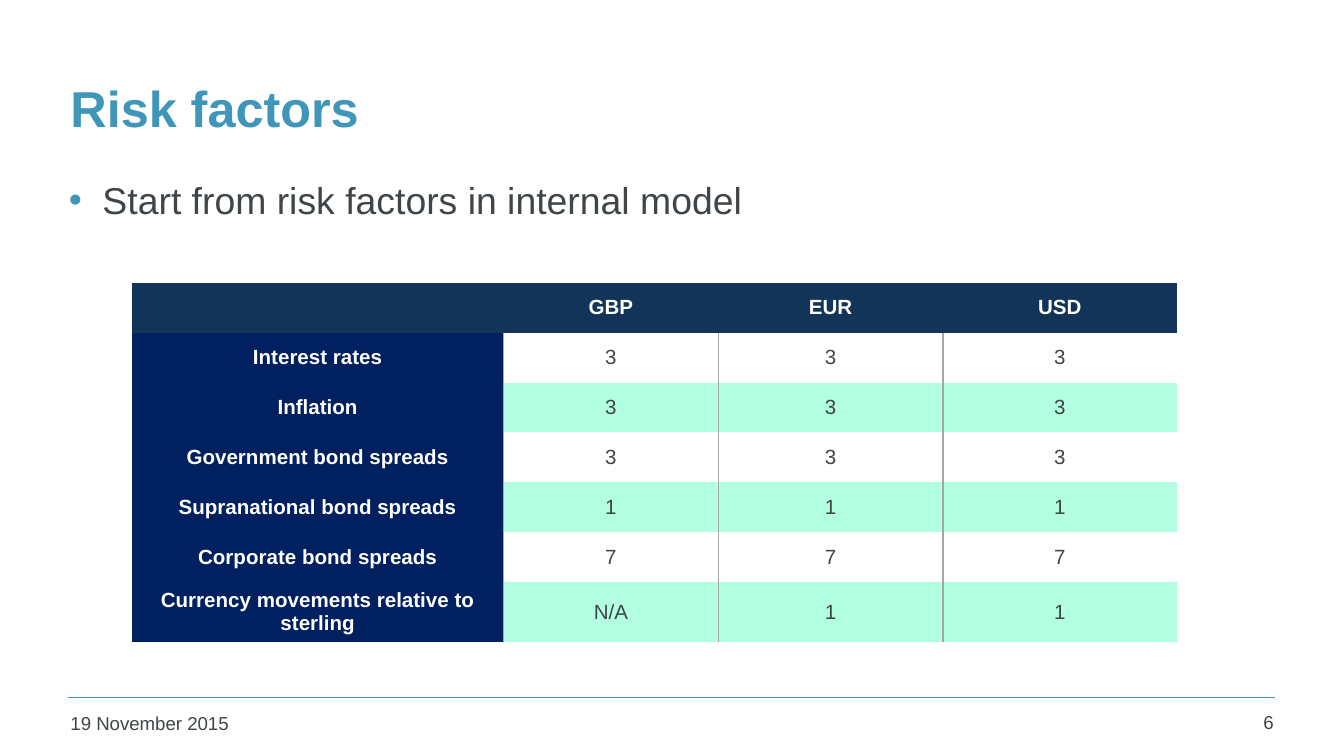
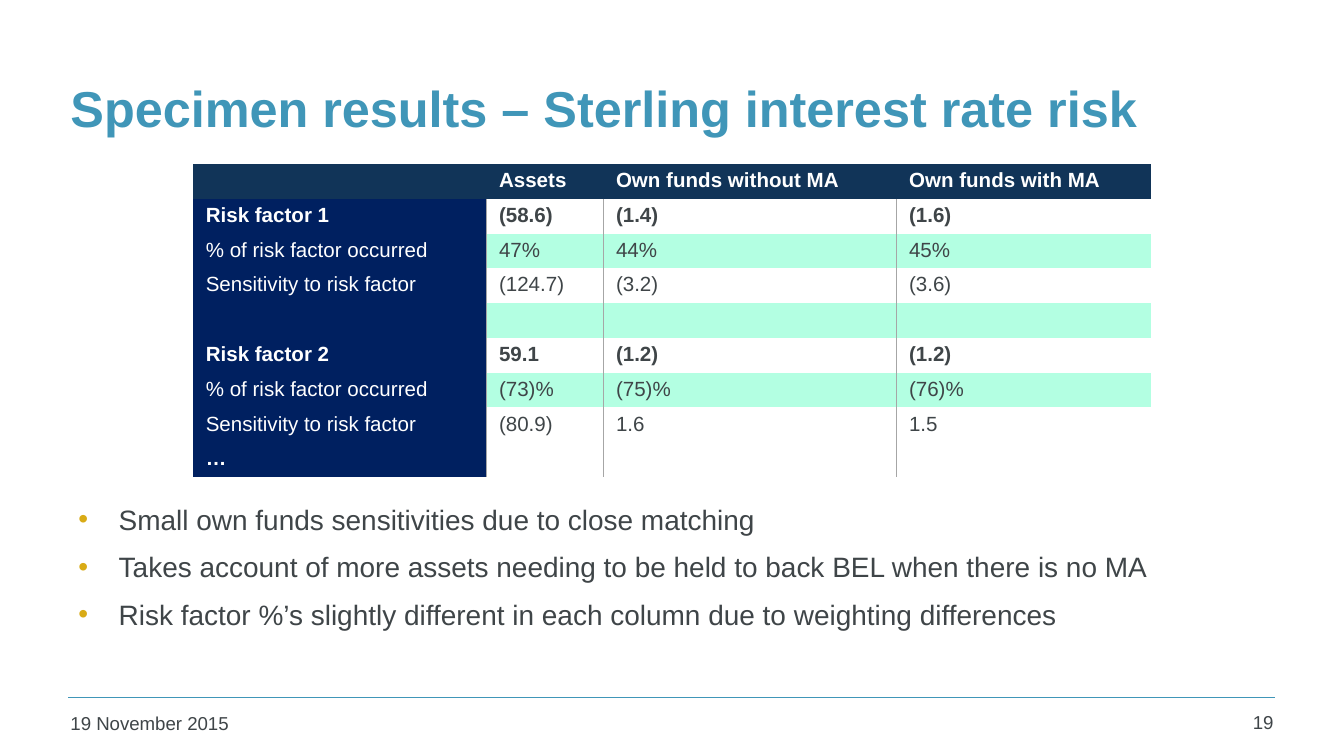
"""Build two slides on risk factors and specimen interest rate results."""
from dataclasses import dataclass

from lxml import etree
from pptx import Presentation
from pptx.dml.color import RGBColor
from pptx.enum.shapes import MSO_CONNECTOR
from pptx.enum.text import MSO_ANCHOR, PP_ALIGN
from pptx.oxml.ns import qn
from pptx.util import Pt

STRAIGHT = MSO_CONNECTOR.STRAIGHT
TOP, MIDDLE = MSO_ANCHOR.TOP, MSO_ANCHOR.MIDDLE
LEFT, CENTER, RIGHT = PP_ALIGN.LEFT, PP_ALIGN.CENTER, PP_ALIGN.RIGHT
NO_GRID_STYLE = "{2D5ABB26-0587-4C30-8999-92F81FD0307C}"


@dataclass(frozen=True)
class Theme:
    """Colours, type sizes and insets shared by the slides."""
    font: str = "Arial"
    accent: str = "4096B8"
    gold: str = "D9AB16"
    ink: str = "3F4548"
    white: str = "FFFFFF"
    header: str = "113458"
    label: str = "002060"
    band: str = "B3FFE2"
    grid: str = "A6A6A6"
    title_size: int = 27
    lead_size: int = 20
    note_size: int = 15
    cell_size: int = 11
    footer_size: int = 10
    side_inset: float = 6.75
    end_inset: float = 2.7


def apply(target, values):
    """Set each named attribute on the target."""
    for name, value in values.items():
        setattr(target, name, value)


def add_xml(parent, tag, **attributes):
    """Append a DrawingML element to the parent."""
    return etree.SubElement(parent, qn(tag), attributes)


class Deck:
    """Hold the theme and current slide and add its elements."""

    def __init__(self, theme):
        """Open an empty presentation."""
        self.theme = theme
        self.presentation = Presentation()
        apply(self.presentation, {"slide_width": Pt(720), "slide_height": Pt(405)})
        self.slide = None
        self.insets = {
            "margin_left": Pt(theme.side_inset), "margin_right": Pt(theme.side_inset),
            "margin_top": Pt(theme.end_inset), "margin_bottom": Pt(theme.end_inset),
        }

    def start_slide(self, title, number):
        """Add a slide with its title, rule and footer."""
        theme = self.theme
        self.slide = self.presentation.slides.add_slide(self.presentation.slide_layouts[6])
        self.rule(36.7, 683.3, 373.7)
        self.text((31, 23.8, 653, 67.7), [title], theme.title_size, theme.accent,
                  bold=True, anchor=MIDDLE)
        self.text((31, 378.7, 158.4, 19.4), ["19 November 2015"], theme.footer_size, theme.ink)
        self.text((638, 378, 51, 20), [number], theme.footer_size, theme.ink, align=RIGHT)

    def rule(self, left, right, y):
        """Draw the horizontal line above the footer."""
        rule = self.slide.shapes.add_connector(STRAIGHT, Pt(left), Pt(y), Pt(right), Pt(y))
        rule.line.color.rgb = RGBColor.from_string(self.theme.accent)
        rule.line.width = Pt(1)
        add_xml(rule._element.spPr, "a:effectLst")

    def fill_paragraph(self, paragraph, words, size, color, bold=False, align=LEFT):
        """Put formatted words into a paragraph."""
        paragraph.alignment = align
        if not words:
            add_xml(paragraph._p, "a:endParaRPr", sz=str(size * 100))
            return
        run = paragraph.add_run()
        run.text = words
        apply(run.font, {"name": self.theme.font, "size": Pt(size), "bold": bold})
        run.font.color.rgb = RGBColor.from_string(color)

    def text(self, box, lines, size, color, bold=False, align=LEFT, anchor=TOP):
        """Add a text box with one paragraph per line and return its paragraphs."""
        frame = self.slide.shapes.add_textbox(*map(Pt, box)).text_frame
        apply(frame, {"word_wrap": True, "vertical_anchor": anchor, **self.insets})
        for index, line in enumerate(lines):
            paragraph = frame.add_paragraph() if index else frame.paragraphs[0]
            self.fill_paragraph(paragraph, line, size, color, bold, align)
        return frame.paragraphs

    def bullets(self, box, lines, size, bullet_color, indent):
        """Add a bulleted list with a hanging indent."""
        for paragraph in self.text(box, lines, size, self.theme.ink):
            properties = paragraph._p.get_or_add_pPr()
            properties.set("marL", str(Pt(indent)))
            properties.set("indent", str(-Pt(indent)))
            add_xml(add_xml(properties, "a:spcBef"), "a:spcPct", val="50000")
            add_xml(add_xml(properties, "a:buClr"), "a:srgbClr", val=bullet_color)
            add_xml(properties, "a:buFont", typeface=self.theme.font)
            add_xml(properties, "a:buChar", char="•")

    def cell_edges(self, cell, sides):
        """Draw grid lines on the named sides of a cell."""
        properties = cell._tc.get_or_add_tcPr()
        for side in sides:
            edge = add_xml(properties, f"a:ln{side}", w=str(Pt(1)))
            add_xml(add_xml(edge, "a:solidFill"), "a:srgbClr", val=self.theme.grid)

    def table(self, corner, widths, heights, rows, band_rows, bold_rows=(),
              bold_labels=False, align=LEFT, anchor=TOP):
        """Add a table with a dark header and label column and banded values."""
        theme = self.theme
        last = len(widths) - 1
        size = (sum(widths), sum(heights))
        table = self.slide.shapes.add_table(
            len(rows), len(widths), *map(Pt, (*corner, *size))).table
        table._tbl.tblPr.find(qn("a:tableStyleId")).text = NO_GRID_STYLE
        for column, width in zip(table.columns, widths):
            column.width = Pt(width)
        for row, height in zip(table.rows, heights):
            row.height = Pt(height)
        for r, values in enumerate(rows):
            for c, words in enumerate(values):
                cell = table.cell(r, c)
                apply(cell, {"vertical_anchor": anchor, **self.insets})
                if r:
                    self.cell_edges(cell, "L" * (c > 0) + "R" * (c < last))
                fill = (theme.header if r == 0 else theme.label if c == 0
                        else theme.band if r in band_rows else theme.white)
                cell.fill.solid()
                cell.fill.fore_color.rgb = RGBColor.from_string(fill)
                color = theme.white if r == 0 or c == 0 else theme.ink
                bold = r == 0 or r in bold_rows or (bold_labels and c == 0)
                self.fill_paragraph(cell.text_frame.paragraphs[0], words,
                                    theme.cell_size, color, bold, align)


def risk_factors(deck):
    """Build the slide that counts risk factors by currency."""
    theme = deck.theme
    deck.start_slide("Risk factors", "6")
    deck.bullets((30.2, 92.2, 653, 274.3), ["Start from risk factors in internal model"],
                 theme.lead_size, theme.accent, 18)
    counts = [
        ["", "GBP", "EUR", "USD"],
        ["Interest rates", "3", "3", "3"],
        ["Inflation", "3", "3", "3"],
        ["Government bond spreads", "3", "3", "3"],
        ["Supranational bond spreads", "1", "1", "1"],
        ["Corporate bond spreads", "7", "7", "7"],
        ["Currency movements relative to sterling", "N/A", "1", "1"],
    ]
    deck.table((70.7, 151.5), [199, 115.2, 120.2, 125.4], [26.75] * 6 + [30.5], counts,
               band_rows=(2, 4, 6), bold_labels=True, align=CENTER, anchor=MIDDLE)


def specimen_results(deck):
    """Build the slide with sterling interest rate results."""
    theme = deck.theme
    deck.start_slide("Specimen results – Sterling interest rate risk", "19")
    occurred, sensitivity = "% of risk factor occurred", "Sensitivity to risk factor"
    results = [
        ["", "Assets", "Own funds without MA", "Own funds with MA"],
        ["Risk factor 1", "(58.6)", "(1.4)", "(1.6)"],
        [occurred, "47%", "44%", "45%"],
        [sensitivity, "(124.7)", "(3.2)", "(3.6)"],
        ["", "", "", ""],
        ["Risk factor 2", "59.1", "(1.2)", "(1.2)"],
        [occurred, "(73)%", "(75)%", "(76)%"],
        [sensitivity, "(80.9)", "1.6", "1.5"],
        ["…", "", "", ""],
    ]
    deck.table((103.5, 87.9), [157.1, 62.7, 157, 136.3], [18] * len(results), results,
               band_rows=(2, 4, 6), bold_rows=(1, 5, 8))
    deck.bullets((35.3, 266.4, 653, 91.4), [
        "Small own funds sensitivities due to close matching",
        "Takes account of more assets needing to be held to back BEL when there is no MA",
        "Risk factor %’s slightly different in each column due to weighting differences",
    ], theme.note_size, theme.gold, 21.6)


def main():
    """Build and save the presentation."""
    deck = Deck(Theme())
    risk_factors(deck)
    specimen_results(deck)
    deck.presentation.save("out.pptx")


if __name__ == "__main__":
    main()
